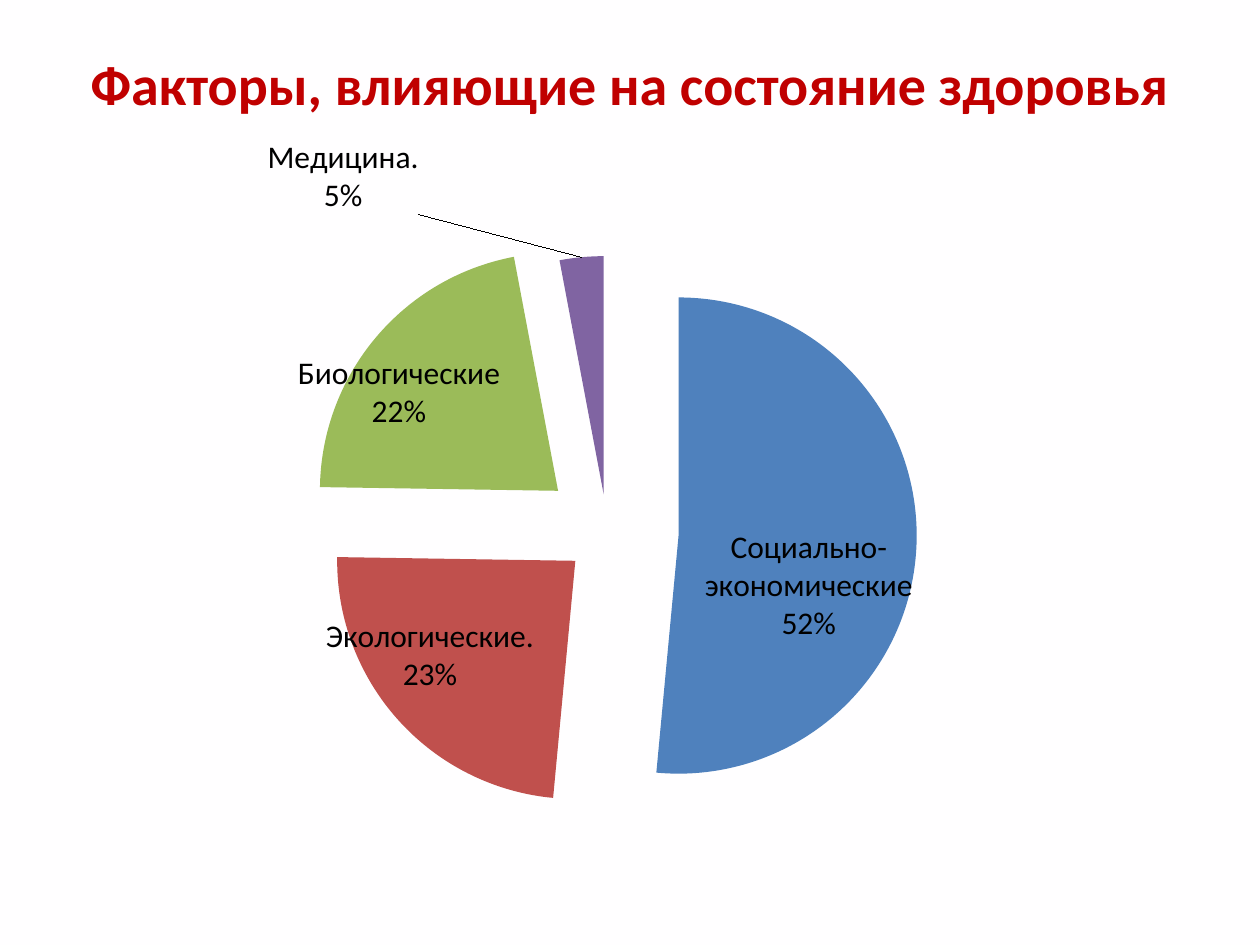
from dataclasses import dataclass

import pptx
import pptx.chart.data
import pptx.dml.color
import pptx.enum.chart
import pptx.enum.text
import pptx.oxml
import pptx.oxml.ns
import pptx.util
from pptx.util import Inches


@dataclass(frozen=True)
class Theme:
    font: str = "Calibri"
    background: str = "FFFEFF"
    title: str = "C00000"
    text: str = "000000"
    title_size: int = 32
    label_size: int = 18
    slices: tuple = ("4F81BD", "C0504D", "9BBB59", "8064A2")


@dataclass(frozen=True)
class Factor:
    category: str
    value: int
    label: str
    explosion: int
    label_offset: tuple


THEME = Theme()

FACTORS = (
    Factor("Кв. 1", 52, "Социально-экономические\n52%", 30, (0.01, 0.06)),
    Factor("Кв. 2", 24, "Экологические.\n23%", 18, (-0.05, 0.02)),
    Factor("Кв. 3", 22, "Биологические\n22%", 27, (-0.06, -0.03)),
    Factor("Кв. 4", 3, "Медицина.\n5%", 16, (-0.22, -0.27)),
)


def color(value):
    return pptx.dml.color.RGBColor.from_string(value)


def style_font(font, size, value, bold=False):
    font.name = THEME.font
    font.size = pptx.util.Pt(size)
    font.bold = bold
    font.color.rgb = color(value)


def write_text(frame, text, size, value, bold=False):
    for index, line in enumerate(text.split("\n")):
        paragraph = frame.paragraphs[0] if index == 0 else frame.add_paragraph()
        paragraph.alignment = pptx.enum.text.PP_ALIGN.CENTER
        run = paragraph.add_run()
        run.text = line
        style_font(run.font, size, value, bold)


def add_title(slide, text):
    box = slide.shapes.add_textbox(Inches(0.5), Inches(0.3), Inches(9), Inches(0.72))
    box.text_frame.word_wrap = True
    box.text_frame.vertical_anchor = pptx.enum.text.MSO_ANCHOR.MIDDLE
    write_text(box.text_frame, text, size=THEME.title_size, value=THEME.title, bold=True)


def make_layout(**values):
    namespace = pptx.oxml.ns.nsdecls("c")
    children = "".join(f'<c:{name} val="{value}"/>' for name, value in values.items())
    return pptx.oxml.parse_xml(
        f"<c:layout {namespace}><c:manualLayout>{children}</c:manualLayout></c:layout>"
    )


def set_plot_layout(chart):
    plot_area = chart._chartSpace.chart.plotArea
    for layout in plot_area.findall(pptx.oxml.ns.qn("c:layout")):
        plot_area.remove(layout)
    plot_area.insert(0, make_layout(
        layoutTarget="inner", xMode="edge", yMode="edge", x=0.27, y=0.21, w=0.42, h=0.65,
    ))


def set_explosions(series):
    namespace = pptx.oxml.ns.nsdecls("c")
    slices = series._element.findall(pptx.oxml.ns.qn("c:dPt"))
    for slice_element, factor in zip(slices, FACTORS):
        explosion = pptx.oxml.parse_xml(f'<c:explosion {namespace} val="{factor.explosion}"/>')
        slice_element.find(pptx.oxml.ns.qn("c:spPr")).addprevious(explosion)


def add_label(point, text, offset):
    label = point.data_label
    write_text(label.text_frame, text, size=THEME.label_size, value=THEME.text)
    label.position = pptx.enum.chart.XL_LABEL_POSITION.CENTER
    label_element = label._get_or_add_dLbl()
    label_element.find(pptx.oxml.ns.qn("c:idx")).addnext(make_layout(x=offset[0], y=offset[1]))


def add_pie(slide):
    data = pptx.chart.data.CategoryChartData()
    data.categories = [factor.category for factor in FACTORS]
    data.add_series("Series 1", [factor.value for factor in FACTORS])
    chart = slide.shapes.add_chart(
        pptx.enum.chart.XL_CHART_TYPE.PIE,
        Inches(0.5), Inches(1.09), Inches(9), Inches(5.86), data,
    ).chart
    chart.has_legend = False
    chart.has_title = False
    style_font(chart.font, THEME.label_size, THEME.text)
    set_plot_layout(chart)
    plot = chart.plots[0]
    plot.vary_by_categories = True
    series = plot.series[0]
    labels = series.data_labels
    labels.show_category_name = True
    labels.show_percentage = True
    labels.show_value = False
    labels.number_format = "0%"
    labels.number_format_is_linked = False
    for index, factor in enumerate(FACTORS):
        point = series.points[index]
        point.format.fill.solid()
        point.format.fill.fore_color.rgb = color(THEME.slices[index])
        add_label(point, factor.label, factor.label_offset)
    set_explosions(series)


def main():
    presentation = pptx.Presentation()
    presentation.slide_width = Inches(10)
    presentation.slide_height = Inches(7.5)
    slide = presentation.slides.add_slide(presentation.slide_layouts[6])
    slide.background.fill.solid()
    slide.background.fill.fore_color.rgb = color(THEME.background)
    add_title(slide, "Факторы, влияющие на состояние здоровья")
    add_pie(slide)
    presentation.save("out.pptx")


if __name__ == "__main__":
    main()
